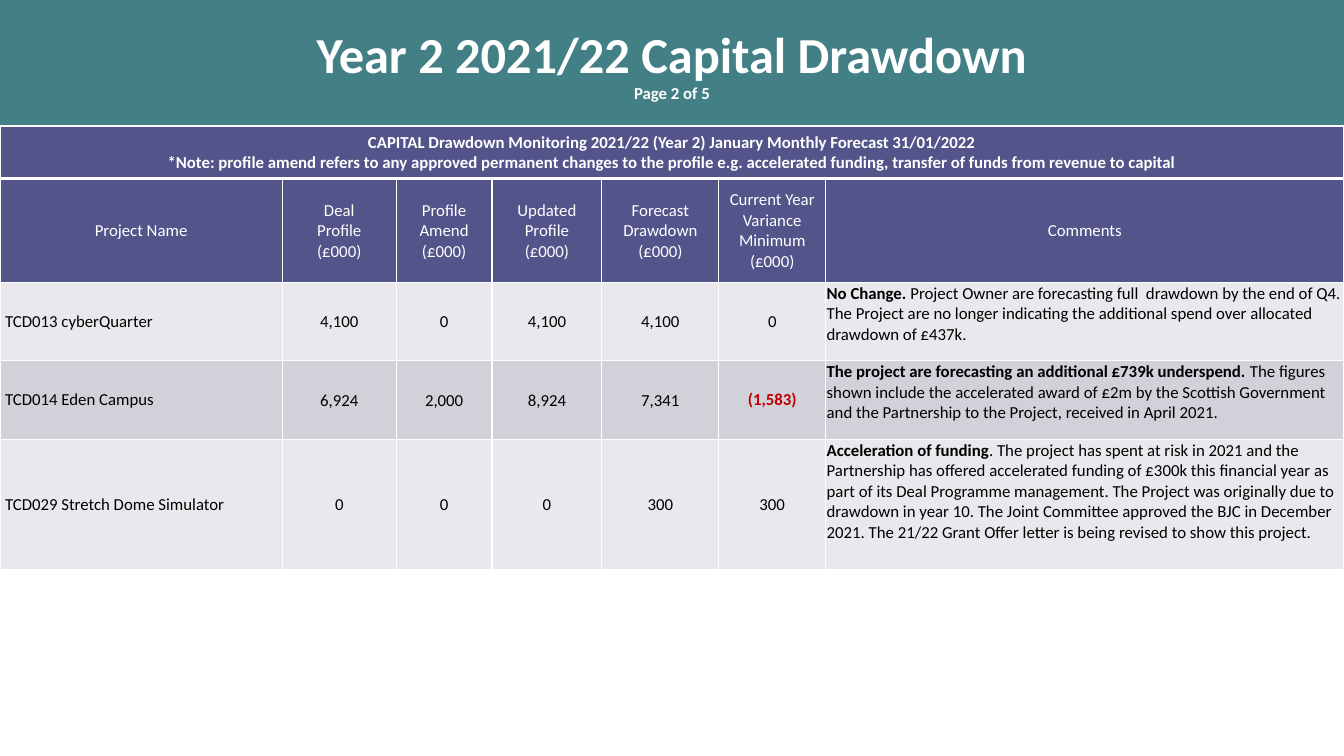
import pptx
import pptx.dml.color
import pptx.enum.shapes
import pptx.enum.text
import pptx.oxml
import pptx.oxml.ns
import pptx.util

Inches = pptx.util.Inches
ALIGN = pptx.enum.text.PP_ALIGN
ANCHOR = pptx.enum.text.MSO_ANCHOR

# Content: a text is a list of paragraphs, a paragraph is a list of (words, bold)
TITLE = "Year 2 2021/22 Capital Drawdown"
PAGE = "Page 2 of 5"
CAPTION = [
    "CAPITAL Drawdown Monitoring 2021/22 (Year 2) January Monthly Forecast 31/01/2022",
    "*Note: profile amend refers to any approved permanent changes to the profile "
    "e.g. accelerated funding, transfer of funds from revenue to capital",
]
HEADINGS = [
    ["Project Name"],
    ["Deal", "Profile", "(£000)"],
    ["Profile", "Amend", "(£000)"],
    ["Updated", "Profile", "(£000)"],
    ["Forecast", "Drawdown", "(£000)"],
    ["Current Year Variance Minimum", "(£000)"],
    ["Comments"],
]
PROJECTS = [
    ("TCD013 cyberQuarter", ["4,100", "0", "4,100", "4,100", "0"],
     "No Change. ",
     "Project Owner are forecasting full  drawdown by the end of Q4. The Project are no "
     "longer indicating the additional spend over allocated drawdown of £437k."),
    ("TCD014 Eden Campus", ["6,924", "2,000", "8,924", "7,341", "(1,583)"],
     "The project are forecasting an additional £739k underspend. ",
     "The figures shown include the accelerated award of £2m by the Scottish Government "
     "and the Partnership to the Project, received in April 2021."),
    ("TCD029 Stretch Dome Simulator", ["0", "0", "0", "300", "300"],
     "Acceleration of funding",
     ". The project has spent at risk in 2021 and the Partnership has offered accelerated "
     "funding of £300k this financial year as part of its Deal Programme management. The "
     "Project was originally due to drawdown in year 10. The Joint Committee approved the "
     "BJC in December 2021. The 21/22 Grant Offer letter is being revised to show this "
     "project."),
]

COLORS = {"banner": "438086", "heading": "53548A", "light": "E9E9ED", "dark": "D1D1DA",
          "white": "FFFFFF", "black": "000000", "negative": "C00000"}
FONT = "Calibri"
SLIDE_W, SLIDE_H, BANNER_H = 13.33, 7.5, 1.25
COL_WIDTHS = [2.8, 1.13, 0.95, 1.09, 1.16, 1.06, 5.14]
ROW_HEIGHTS = [0.52, 1.03, 0.78, 0.78, 1.29]
TIGHT = (0.01, 0.01, 0.01, 0)
ROOMY = (0.05, 0.05, 0.05, 0.05)


def rgb(name):
    return pptx.dml.color.RGBColor.from_string(COLORS[name])


def write(frame, paragraphs, sizes=(12,), color="black", bold=False, align=ALIGN.CENTER):
    """Fill a text frame; a paragraph is a string or a list of (words, bold) runs."""
    for index, content in enumerate(paragraphs):
        paragraph = frame.paragraphs[0] if index == 0 else frame.add_paragraph()
        paragraph.alignment = align
        for words, weight in [(content, bold)] if isinstance(content, str) else content:
            run = paragraph.add_run()
            run.text = words
            run.font.name = FONT
            run.font.size = pptx.util.Pt(sizes[min(index, len(sizes) - 1)])
            run.font.bold = weight
            run.font.color.rgb = rgb(color)


def set_borders(cell, **widths):
    """Draw white borders, 1 pt unless another width is given for a side."""
    for side in "LRTB":
        width = pptx.util.Pt(widths.get(side, 1))
        cell._tc.get_or_add_tcPr().append(pptx.oxml.parse_xml(
            f'<a:ln{side} {pptx.oxml.ns.nsdecls("a")} w="{width}"><a:solidFill>'
            f'<a:srgbClr val="{COLORS["white"]}"/></a:solidFill></a:ln{side}>'))


def fill_cell(cell, paragraphs, fill, margins=TIGHT, anchor=ANCHOR.MIDDLE, **text_format):
    cell.fill.solid()
    cell.fill.fore_color.rgb = rgb(fill)
    cell.margin_left, cell.margin_top, cell.margin_right, cell.margin_bottom = map(Inches, margins)
    cell.vertical_anchor = anchor
    write(cell.text_frame, paragraphs, **text_format)


def main():
    deck = pptx.Presentation()
    deck.slide_width, deck.slide_height = Inches(SLIDE_W), Inches(SLIDE_H)
    slide = deck.slides.add_slide(deck.slide_layouts[6])

    # Title banner
    banner = slide.shapes.add_shape(pptx.enum.shapes.MSO_SHAPE.RECTANGLE, 0, 0,
                                    Inches(SLIDE_W), Inches(BANNER_H))
    banner.shadow.inherit = False
    banner.fill.solid()
    banner.fill.fore_color.rgb = rgb("banner")
    banner.line.fill.background()
    banner.text_frame.word_wrap = True
    banner.text_frame.vertical_anchor = ANCHOR.MIDDLE
    write(banner.text_frame, [TITLE, PAGE], sizes=(36, 12), color="white", bold=True)

    # Table grid
    drawdown = slide.shapes.add_table(
        len(ROW_HEIGHTS), len(COL_WIDTHS), 0, Inches(BANNER_H),
        Inches(sum(COL_WIDTHS)), Inches(sum(ROW_HEIGHTS))).table
    drawdown.horz_banding = False
    for column, width in zip(drawdown.columns, COL_WIDTHS):
        column.width = Inches(width)
    for row, height in zip(drawdown.rows, ROW_HEIGHTS):
        row.height = Inches(height)
    rule_under_caption = {0: {"B": 3}, 1: {"T": 3}}
    for row_index, row in enumerate(drawdown.rows):
        for cell in row.cells:
            set_borders(cell, **rule_under_caption.get(row_index, {}))

    # Caption and headings
    caption = drawdown.cell(0, 0)
    caption.merge(drawdown.cell(0, len(COL_WIDTHS) - 1))
    fill_cell(caption, CAPTION, "heading", color="white", bold=True)
    for col, heading in enumerate(HEADINGS):
        fill_cell(drawdown.cell(1, col), heading, "heading", color="white")

    # Projects
    for index, (project, figures, verdict, detail) in enumerate(PROJECTS):
        cells = drawdown.rows[index + 2].cells
        band = "dark" if index % 2 else "light"
        fill_cell(cells[0], [project], band, margins=ROOMY, align=ALIGN.LEFT)
        for col, figure in enumerate(figures, start=1):
            negative = figure.startswith("(")
            fill_cell(cells[col], [figure], band, margins=ROOMY if col == 5 else TIGHT,
                      color="negative" if negative else "black", bold=negative)
        fill_cell(cells[6], [[(verdict, True), (detail, False)]], band,
                  anchor=ANCHOR.TOP, align=ALIGN.LEFT)

    deck.save("out.pptx")


if __name__ == "__main__":
    main()
